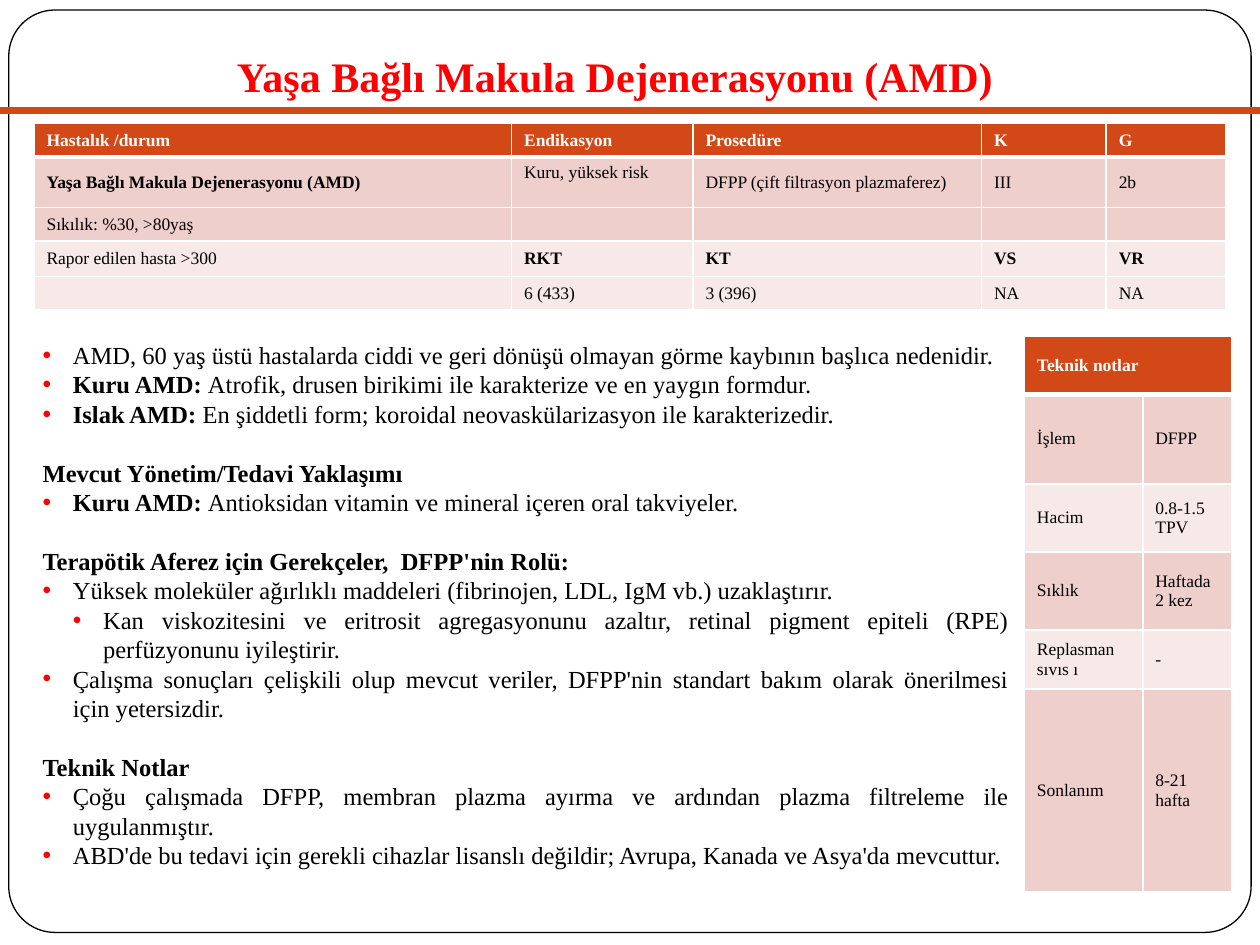
from lxml import etree
from pptx import Presentation
from pptx.dml.color import RGBColor
from pptx.enum.shapes import MSO_CONNECTOR, MSO_SHAPE
from pptx.enum.text import MSO_ANCHOR as ANCHOR, PP_ALIGN as ALIGN
from pptx.oxml.ns import qn
from pptx.util import Inches, Pt

FONT = "Times New Roman"
C = {"accent": "D34817", "red": "FF0000", "black": "000000", "white": "FFFFFF",
     "dark": "EFCFCC", "light": "F7E9E7"}

TITLE = "Yaşa Bağlı Makula Dejenerasyonu (AMD)"

# Body: (level, bold part, plain part, starts a new block); level None is a heading
BODY = [
    (0, "", "AMD, 60 yaş üstü hastalarda ciddi ve geri dönüşü olmayan görme kaybının "
            "başlıca nedenidir.", False),
    (0, "Kuru AMD: ", "Atrofik, drusen birikimi ile karakterize ve en yaygın formdur.", False),
    (0, "Islak AMD:", " En şiddetli form; koroidal neovaskülarizasyon ile karakterizedir.", False),
    (None, "Mevcut Yönetim/Tedavi Yaklaşımı", "", True),
    (0, "Kuru AMD: ", "Antioksidan vitamin ve mineral içeren oral takviyeler.", False),
    (None, "Terapötik Aferez için Gerekçeler,  DFPP'nin Rolü:", "", True),
    (0, "", "Yüksek moleküler ağırlıklı maddeleri (fibrinojen, LDL, IgM vb.) uzaklaştırır.", False),
    (1, "", "Kan viskozitesini ve eritrosit agregasyonunu azaltır, retinal pigment epiteli "
            "(RPE) perfüzyonunu iyileştirir.", False),
    (0, "", "Çalışma sonuçları çelişkili olup mevcut veriler, DFPP'nin standart bakım olarak "
            "önerilmesi için yetersizdir.", False),
    (None, "Teknik Notlar", "", True),
    (0, "", "Çoğu çalışmada DFPP, membran plazma ayırma ve ardından plazma filtreleme ile "
            "uygulanmıştır.", False),
    (0, "", "ABD'de bu tedavi için gerekli cihazlar lisanslı değildir; Avrupa, Kanada ve "
            "Asya'da mevcuttur.", False),
]

SUMMARY = {
    "at": (0.27, 0.98),
    "cols": [3.79, 1.44, 2.29, 0.99, 0.95],
    "heights": [0.25, 0.4, 0.25, 0.28, 0.25],
    "fills": ["accent", "dark", "dark", "light", "light"],
    "bold": {(1, 0), (3, 1), (3, 2), (3, 3), (3, 4)},
    "rows": [
        ["Hastalık /durum", "Endikasyon", "Prosedüre", "K", "G"],
        [TITLE, "Kuru, yüksek risk", "DFPP (çift filtrasyon plazmaferez)", "III", "2b"],
        ["Sıkılık: %30, >80yaş", "", "", "", ""],
        ["Rapor edilen hasta >300", "RKT", "KT", "VS", "VR"],
        ["", "6 (433)", "3 (396)", "NA", "NA"],
    ],
}
TECHNICAL = {
    "at": (8.13, 2.67),
    "cols": [0.94, 0.71],
    "heights": [0.46, 0.71, 0.54, 0.62, 0.47, 1.61],
    "fills": ["accent", "dark", "light", "dark", "light", "dark"],
    "bold": set(),
    "rows": [["Teknik notlar", ""], ["İşlem", "DFPP"], ["Hacim", "0.8-1.5 TPV"],
             ["Sıklık", "Haftada 2 kez"], ["Replasman sıvıs ı", "-"],
             ["Sonlanım", "8-21 hafta"]],
}


def rgb(name):
    return RGBColor.from_string(C[name])


def add_run(p, text, size, color="black", bold=False):
    r = p.add_run()
    r.text = text
    r.font.name, r.font.size, r.font.bold = FONT, Pt(size), bold
    r.font.color.rgb = rgb(color)


def set_bullet(p, level):
    indent = Inches(0.24)
    pPr = p._p.get_or_add_pPr()
    pPr.set("marL", str(indent * (level + 1)))
    pPr.set("indent", str(-indent))
    color = etree.SubElement(pPr, qn("a:buClr"))
    etree.SubElement(color, qn("a:srgbClr"), val=C["red"])
    etree.SubElement(pPr, qn("a:buFont"), typeface="Arial")
    etree.SubElement(pPr, qn("a:buChar"), char="•")


def set_borders(cell, widths):
    tcPr = cell._tc.get_or_add_tcPr()
    for i, (side, width) in enumerate(widths.items()):
        ln = etree.Element(qn(f"a:ln{side}"), w=str(Pt(width)))
        fill = etree.SubElement(ln, qn("a:solidFill"))
        etree.SubElement(fill, qn("a:srgbClr"), val=C["white"])
        tcPr.insert(i, ln)


def add_table(slide, data):
    cols, heights = data["cols"], data["heights"]
    x, y = data["at"]
    table = slide.shapes.add_table(len(heights), len(cols), Inches(x), Inches(y),
                                   Inches(sum(cols)), Inches(sum(heights))).table
    for col, width in zip(table.columns, cols):
        col.width = Inches(width)
    for i, (row, height) in enumerate(zip(table.rows, heights)):
        row.height = Inches(height)
        for j, text in enumerate(data["rows"][i]):
            cell = table.cell(i, j)
            cell.vertical_anchor = ANCHOR.MIDDLE
            cell.fill.solid()
            cell.fill.fore_color.rgb = rgb(data["fills"][i])
            set_borders(cell, {"L": 1, "R": 1, "T": 3 if i == 1 else 1, "B": 3 if i == 0 else 1})
            p = cell.text_frame.paragraphs[0]
            p.alignment = ALIGN.JUSTIFY
            if text:
                add_run(p, text, 10, "black" if i else "white",
                        i == 0 or (i, j) in data["bold"])
            else:  # keeps empty cells from stretching their row
                p._p.get_or_add_endParaRPr().set("sz", "1000")
    return table


def add_text_box(slide, x, y, w, h):
    tf = slide.shapes.add_textbox(Inches(x), Inches(y), Inches(w), Inches(h)).text_frame
    tf.word_wrap = True
    return tf


prs = Presentation()
prs.slide_width, prs.slide_height = Inches(10), Inches(7.5)
slide = prs.slides.add_slide(prs.slide_layouts[6])

# Rounded frame
frame = slide.shapes.add_shape(MSO_SHAPE.ROUNDED_RECTANGLE, Inches(0.07), Inches(0.08),
                               Inches(9.86), Inches(7.32))
frame.adjustments[0] = 0.05
frame.shadow.inherit = False
frame.fill.solid()
frame.fill.fore_color.rgb = rgb("white")
frame.line.color.rgb = rgb("black")
frame.line.width = Pt(0.75)

# Title and rule
tf = add_text_box(slide, 0.2, 0.18, 9.36, 0.72)
tf.vertical_anchor = ANCHOR.BOTTOM
tf.margin_bottom = Inches(0.1)
tf.paragraphs[0].alignment = ALIGN.CENTER
add_run(tf.paragraphs[0], TITLE, 24, "red", True)

rule = slide.shapes.add_connector(MSO_CONNECTOR.STRAIGHT, 0, Inches(0.88),
                                  Inches(10), Inches(0.88))
rule.line.color.rgb = rgb("accent")
rule.line.width = Pt(4)
etree.SubElement(rule._element.spPr, qn("a:effectLst"))

# Body text, one line of space before each new block
LINE = Pt(16.8)
tf = add_text_box(slide, 0.24, 2.65, 7.87, 4.37)
for i, (level, bold, plain, new_block) in enumerate(BODY):
    p = tf.add_paragraph() if i else tf.paragraphs[0]
    p.alignment = ALIGN.JUSTIFY
    p.line_spacing = LINE
    p.space_before = LINE if new_block else Pt(0)
    if level is not None:
        p.level = level
        set_bullet(p, level)
    if bold:
        add_run(p, bold, 14, bold=True)
    if plain:
        add_run(p, plain, 14)

# Tables
summary = add_table(slide, SUMMARY)
summary.cell(1, 1).vertical_anchor = ANCHOR.TOP
technical = add_table(slide, TECHNICAL)
technical.cell(0, 0).merge(technical.cell(0, 1))

prs.save("out.pptx")
